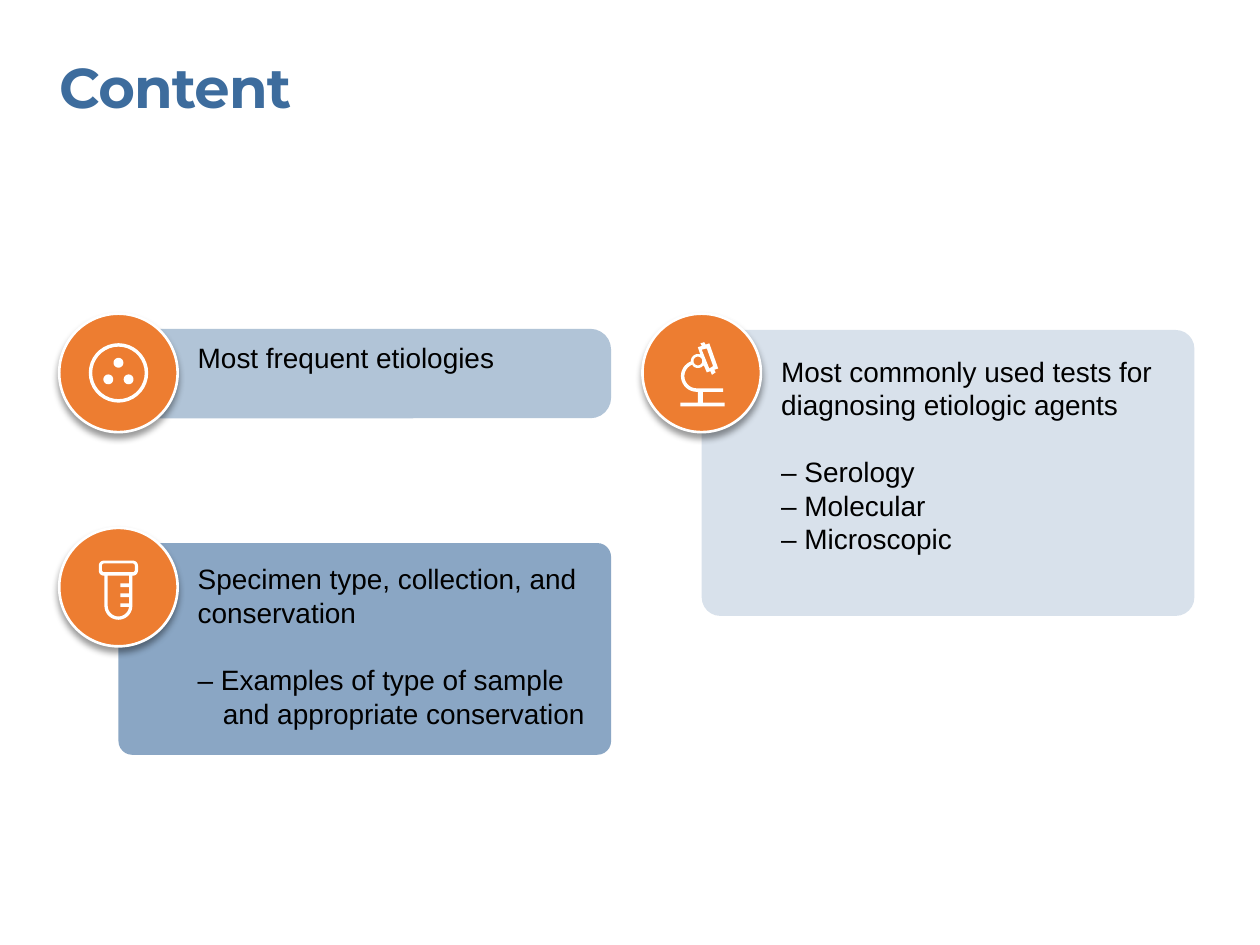
"""Build the content slide: three topic cards with round icon badges."""
from math import cos, radians, sin

from lxml import etree
from pptx import Presentation
from pptx.dml.color import RGBColor
from pptx.enum import shapes, text
from pptx.oxml.ns import qn
from pptx.util import Pt

BLUE, ORANGE, WHITE, BLACK = "3D6C9D", "ED7D31", "FFFFFF", "000000"


def paint(fill, color, opacity=100):
    fill.solid()
    fill.fore_color.rgb = RGBColor.from_string(color)
    if opacity < 100:
        srgb = fill._xPr.find(".//" + qn("a:srgbClr"))
        etree.SubElement(srgb, qn("a:alpha"), val=str(opacity * 1000))


def add_text(lines, left, top, width, height, size=16, font="Arial",
             color=BLACK, bold=False, tracking=0, gap_before=None, hanging=None):
    frame = slide.shapes.add_textbox(Pt(left), Pt(top), Pt(width), Pt(height)).text_frame
    frame.word_wrap = True
    frame.auto_size = text.MSO_AUTO_SIZE.SHAPE_TO_FIT_TEXT
    frame.margin_left = frame.margin_top = frame.margin_right = frame.margin_bottom = 0
    for i, line in enumerate(lines):
        paragraph = frame.add_paragraph() if i else frame.paragraphs[0]
        run = paragraph.add_run()
        run.text = line
        run.font.size, run.font.name, run.font.bold = Pt(size), font, bold
        paint(run.font.fill, color)
        if tracking:
            run._r.get_or_add_rPr().set("spc", str(round(tracking * 100)))
        if i == 1 and gap_before:
            paragraph.space_before = Pt(gap_before)
        if i and hanging:
            properties = paragraph._p.get_or_add_pPr()
            properties.set("marL", str(Pt(hanging)))
            properties.set("indent", str(-Pt(hanging)))


deck = Presentation()
deck.slide_width, deck.slide_height = Pt(720), Pt(540)
slide = deck.slides.add_slide(deck.slide_layouts[6])

# Contours hold points (x, y) and arcs (x, y, radius, from, to) around the badge centre
dish = [[(0, 0, 17, 0, 360)], [(0, 0, 15, 0, 360)]]
dish += [[(x, y, 2.8, 0, 360)] for x, y in ((0, -5.8), (-5.8, 3.7), (5.8, 3.7))]

microscope = [
    [(-12.2, 18.7), (-12.2, 16.6), (-2.2, 16.6), (-2.2, 10.4),
     (-2.9, 1.4, 9, 90, 252), (-2.2, -7.2, 4, 180, 290),
     (-2.2, -15.1), (0, -15.8), (-0.7, -17.3), (1.4, -18), (2.2, -16.6),
     (4.3, -17.3), (9.4, -2.9), (7.2, -2.2), (7.9, -0.7), (5.8, 0.7),
     (5, -1.4), (2.9, -0.7), (1.4, -4.3),
     (-2.2, -7.2, 4, 40, 140), (-2.9, 1.4, 7, 252, 90),
     (12.2, 8.4), (12.2, 10.4), (0.7, 10.4), (0.7, 16.6), (13, 16.6), (13, 18.7)],
    [(4.3, -2.9), (6.5, -4.3), (2.9, -14.4), (0, -13.7)],
    [(-2.2, -7.2, 2.5, 0, 360)],
]

tube = []
for half_width, top, bottom, r in ((11.2, -16.9, -8.3, 2.9), (9.4, -15.3, -10.3, 1.2)):
    x = half_width - r
    tube.append([(-x, top + r, r, 180, 270), (x, top + r, r, 270, 360),
                 (x, bottom - r, r, 0, 90), (-x, bottom - r, r, 90, 180)])
tube.append([(-8, -8.3), (8, -8.3), (0, 8.9, 8, 0, 180)])
marks = [(x, y + dy) for y in (-3.9, 1.8, 7.5)
         for x, dy in ((6.1, 0), (1.2, 0), (1.2, 2.1), (6.1, 2.1))]
tube.append([(-6.1, -8.3), (6.1, -8.3), *marks, (0, 8.9, 6.1, 0, 180)])

cards = [
    (67.7, 187.9, 51.1, 0.231, 40),
    (401, 188.6, 163.4, 0.065, 20),
    (67.7, 310.3, 121, 0.065, 60),
]
for left, top, height, rounding, opacity in cards:
    card = slide.shapes.add_shape(shapes.MSO_SHAPE.ROUNDED_RECTANGLE,
                                  Pt(left), Pt(top), Pt(281.5), Pt(height))
    card.adjustments[0] = rounding
    card.shadow.inherit = False
    paint(card.fill, BLUE, opacity)
    card.line.fill.background()

add_text(["Content"], 33.8, 30.2, 615.6, 38.9, size=32, font="Montserrat",
         color=BLUE, bold=True, tracking=-0.5)
add_text(["Most frequent etiologies"], 113, 194.4, 216.7, 19.4)
add_text(["Most commonly used tests for diagnosing etiologic agents",
          "– Serology", "– Molecular", "– Microscopic"],
         446.4, 202.3, 223.2, 116.6, gap_before=19.2)
add_text(["Specimen type, collection, and conservation",
          "– Examples of type of sample and appropriate conservation"],
         113, 321.1, 226.8, 97.2, gap_before=19.2, hanging=14.4)

badges = [
    (67.7, 213.1, dish, 0),
    (401, 213.1, microscope, 0.4),
    (67.7, 335.5, tube, 1.8),
]
for center_x, center_y, icon, drop in badges:
    disc = slide.shapes.add_shape(shapes.MSO_SHAPE.OVAL, Pt(center_x - 33.85),
                                  Pt(center_y - 33.85), Pt(67.7), Pt(67.7))
    paint(disc.fill, ORANGE)
    paint(disc.line.fill, WHITE)
    disc.line.width = Pt(1.5)
    disc.shadow.inherit = False
    effects = disc._element.spPr.find(qn("a:effectLst"))
    shadow = etree.SubElement(effects, qn("a:outerShdw"), blurRad=str(Pt(4)),
                              dist=str(Pt(3)), dir="5400000", rotWithShape="0")
    shade = etree.SubElement(shadow, qn("a:srgbClr"), val=BLACK)
    etree.SubElement(shade, qn("a:alpha"), val="40000")

    builder = None
    for contour in icon:
        outline = []
        for x, y, *arc in contour:
            if arc:
                r, start, end = arc
                steps = max(6, round(abs(end - start) / 10))
                angles = [radians(start + (end - start) * i / steps) for i in range(steps + 1)]
                outline += [(x + r * cos(a), y + r * sin(a)) for a in angles]
            else:
                outline.append((x, y))
        points = [(Pt(center_x + x), Pt(center_y + drop + y)) for x, y in outline]
        if builder is None:
            builder = slide.shapes.build_freeform(*points[0])
        else:
            builder.move_to(*points[0])
        builder.add_line_segments(points[1:], close=True)
    symbol = builder.convert_to_shape()
    symbol.shadow.inherit = False
    paint(symbol.fill, WHITE)
    symbol.line.fill.background()

deck.save("out.pptx")
